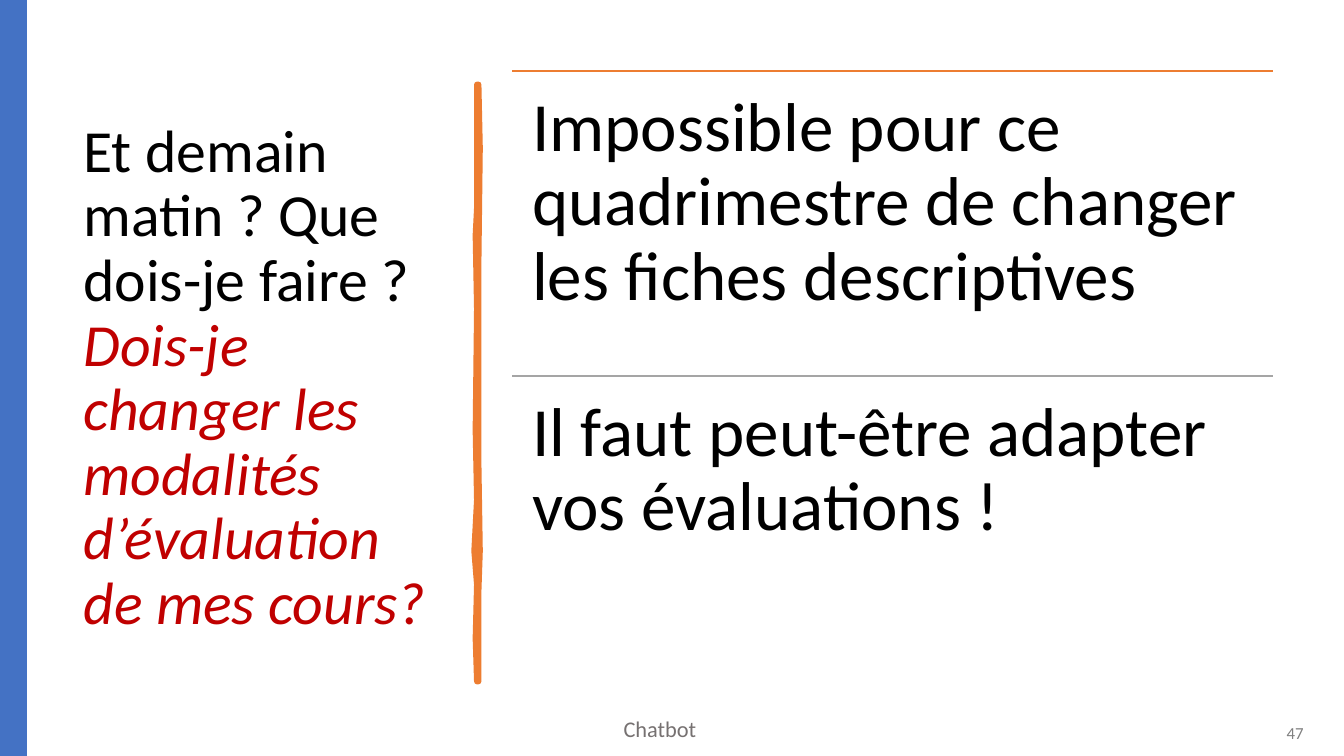
from pptx import Presentation
from pptx.dml.color import RGBColor
from pptx.enum.shapes import MSO_CONNECTOR, MSO_SHAPE
from pptx.enum.text import MSO_ANCHOR, MSO_AUTO_SIZE, PP_ALIGN
from pptx.oxml.ns import qn
from pptx.util import Inches, Pt
from lxml.etree import SubElement

BLUE = RGBColor(0x44, 0x72, 0xC4)
ORANGE = RGBColor(0xED, 0x7D, 0x31)
GREY = RGBColor(0xA5, 0xA5, 0xA5)
RED = RGBColor(0xC0, 0x00, 0x00)
BLACK = RGBColor(0x00, 0x00, 0x00)
FOOTER_GREY = RGBColor(0x76, 0x71, 0x71)
NUMBER_GREY = RGBColor(0x80, 0x80, 0x80)

FONT = "Calibri"
WIDTH = 10
HEIGHT = WIDTH * 9 / 16
QUESTION = "Et demain matin ? Que dois-je faire ?"
FOLLOW_UP = "Dois-je changer les modalités d’évaluation de mes cours?"
ANSWERS = [
    ("Impossible pour ce quadrimestre de changer les fiches descriptives", ORANGE),
    ("Il faut peut-être adapter vos évaluations !", GREY),
]
FOOTERS = [
    ("Chatbot", (2.9, 5.27, 4.02, 0.3), 12, FOOTER_GREY, PP_ALIGN.CENTER, 0.1),
    ("47", (8.12, 5.3, 1.65, 0.3), 9, NUMBER_GREY, PP_ALIGN.RIGHT, 0.07),
]
ANSWER_LEFT, ANSWER_TOP, ANSWER_WIDTH, ANSWER_HEIGHT = 3.81, 0.53, 5.66, 2.27
STROKE_RIGHT = [(3.56, 0.63), (3.57, 1.1), (3.56, 1.95), (3.56, 3.45),
                (3.57, 4.1), (3.56, 4.4), (3.56, 5.07)]
STROKE_LEFT = [(3.55, 5.07), (3.54, 4.75), (3.55, 4.35), (3.53, 4.1),
               (3.55, 3.72), (3.54, 3.2), (3.55, 2.3), (3.54, 1.75),
               (3.55, 1.55), (3.55, 0.63)]


def write(frame, text, size, color, inset):
    """Fill a text frame with one evenly formatted paragraph."""
    frame.word_wrap = True
    frame.margin_left = frame.margin_right = Inches(inset)
    paragraph = frame.paragraphs[0]
    paragraph.text = text
    paragraph.font.name = FONT
    paragraph.font.size = Pt(size)
    paragraph.font.color.rgb = color
    return paragraph


def add_text(slide, box, text, size, color, inset):
    """Add a text box and return its frame and paragraph."""
    frame = slide.shapes.add_textbox(*map(Inches, box)).text_frame
    return frame, write(frame, text, size, color, inset)


def add_title(slide):
    """Place the question and its red follow-up in the title."""
    title = slide.shapes.title
    title.left, title.top, title.width, title.height = map(
        Inches, (0.52, 0.53, 2.8, 4.58))
    frame = title.text_frame
    frame.auto_size = MSO_AUTO_SIZE.NONE
    frame.vertical_anchor = MSO_ANCHOR.MIDDLE
    paragraph = write(frame, QUESTION, 32, BLACK, 0.1)
    paragraph.alignment = PP_ALIGN.LEFT
    paragraph.line_spacing = 0.9
    paragraph.add_line_break()
    follow_up = paragraph.add_run()
    follow_up.text = FOLLOW_UP
    follow_up.font.italic = True
    follow_up.font.color.rgb = RED


def add_brush_stroke(slide):
    """Draw the uneven vertical divider."""
    outline = [(Inches(x), Inches(y)) for x, y in STROKE_RIGHT + STROKE_LEFT]
    builder = slide.shapes.build_freeform(*outline[0])
    builder.add_line_segments(outline[1:], close=True)
    stroke = builder.convert_to_shape()
    stroke.shadow.inherit = False
    stroke.fill.solid()
    stroke.fill.fore_color.rgb = ORANGE
    stroke.line.color.rgb = ORANGE
    stroke.line.width = Pt(3.25)
    SubElement(stroke._element.spPr.find(qn("a:ln")), qn("a:round"))


def add_answer(slide, row, text, color):
    """Add one ruled answer in its row."""
    top = ANSWER_TOP + row * ANSWER_HEIGHT
    rule = slide.shapes.add_connector(
        MSO_CONNECTOR.STRAIGHT, Inches(ANSWER_LEFT), Inches(top),
        Inches(ANSWER_LEFT + ANSWER_WIDTH), Inches(top))
    rule.line.color.rgb = color
    rule.line.width = Pt(1)
    SubElement(rule._element.spPr, qn("a:effectLst"))
    box = (ANSWER_LEFT, top, ANSWER_WIDTH, ANSWER_HEIGHT)
    frame, paragraph = add_text(slide, box, text, 37, BLACK, 0.15)
    frame.margin_top = frame.margin_bottom = Inches(0.15)
    paragraph.line_spacing = 0.9


def main():
    """Build and save the slide."""
    deck = Presentation()
    deck.slide_width, deck.slide_height = Inches(WIDTH), Inches(HEIGHT)
    slide = deck.slides.add_slide(deck.slide_layouts[5])

    band = slide.shapes.add_shape(
        MSO_SHAPE.RECTANGLE, 0, 0, Inches(WIDTH * 0.02), Inches(HEIGHT))
    band.shadow.inherit = False
    band.fill.solid()
    band.fill.fore_color.rgb = BLUE
    band.line.fill.background()

    for text, box, size, color, alignment, inset in FOOTERS:
        frame, paragraph = add_text(slide, box, text, size, color, inset)
        frame.vertical_anchor = MSO_ANCHOR.MIDDLE
        paragraph.alignment = alignment

    add_title(slide)
    add_brush_stroke(slide)
    for row, (text, color) in enumerate(ANSWERS):
        add_answer(slide, row, text, color)
    deck.save("out.pptx")


if __name__ == "__main__":
    main()
